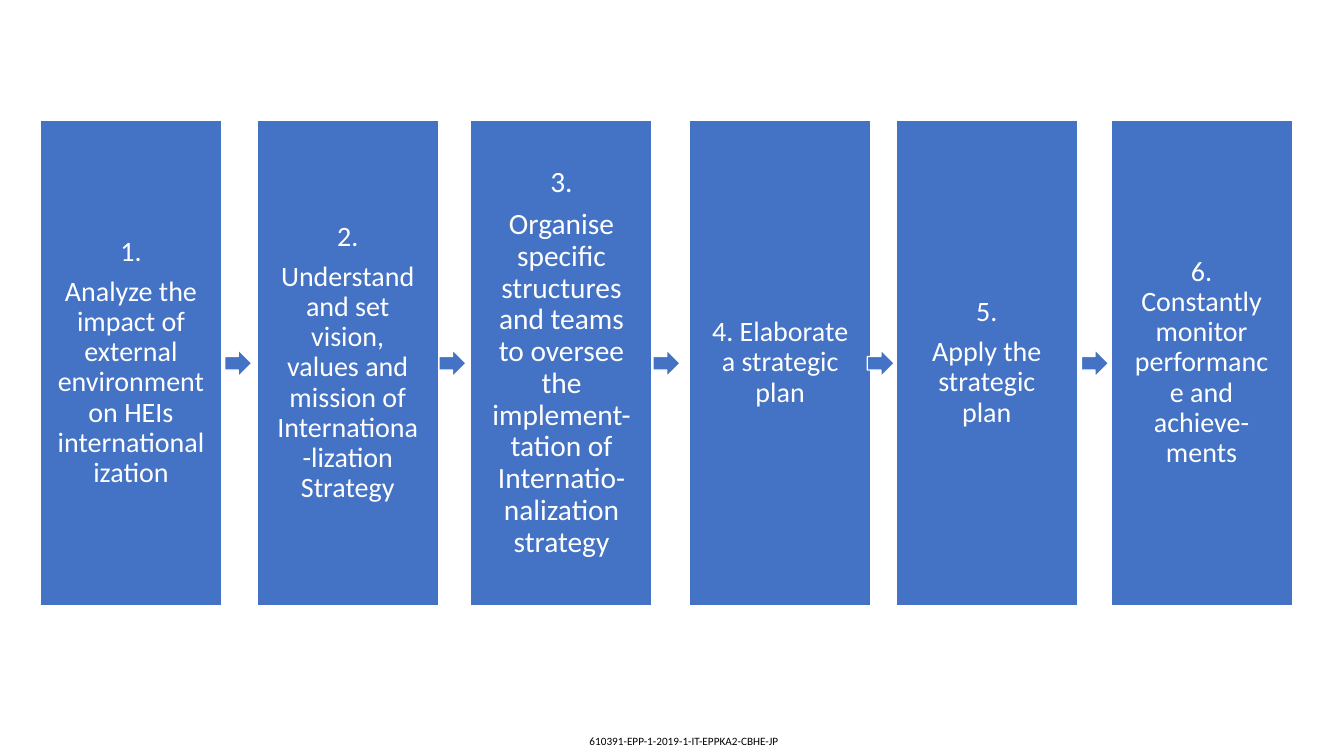
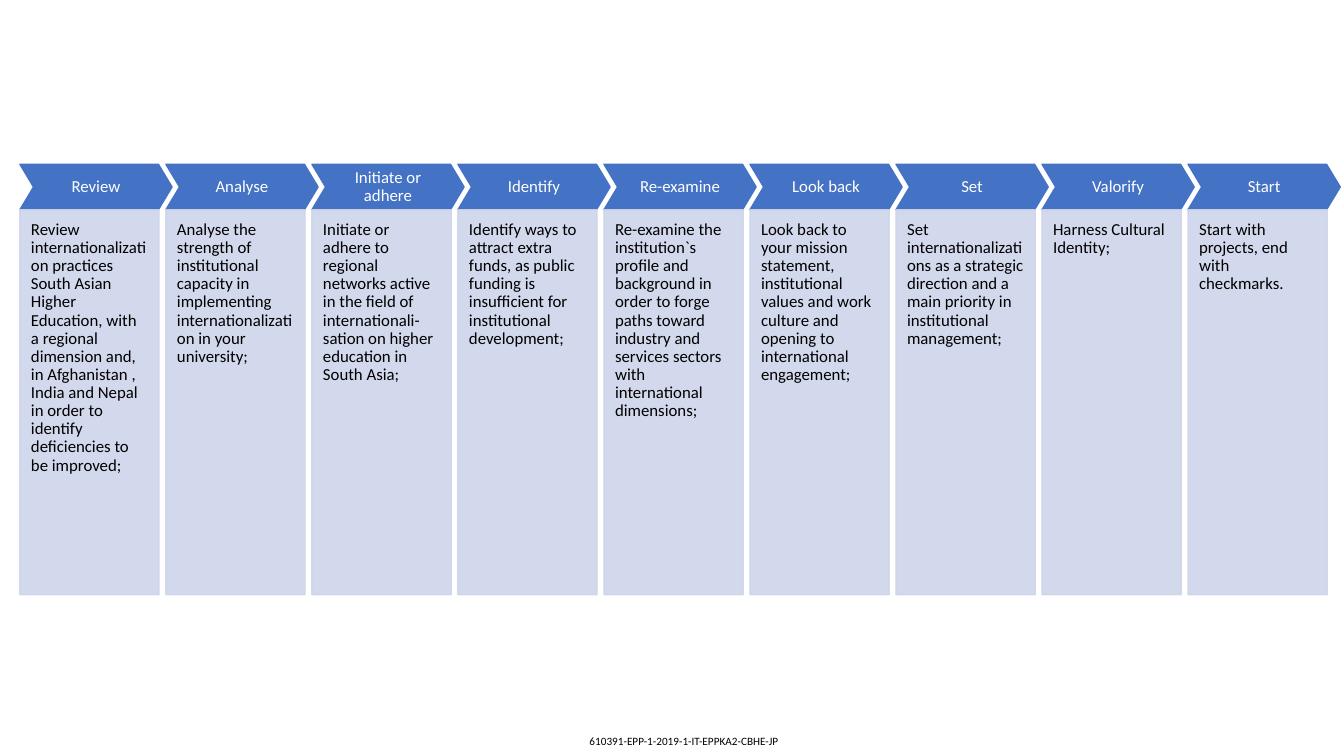
from dataclasses import dataclass

from lxml.etree import SubElement
from pptx import Presentation
from pptx.dml.color import RGBColor
from pptx.enum.shapes import MSO_SHAPE
from pptx.enum.text import MSO_ANCHOR, MSO_AUTO_SIZE, PP_ALIGN
from pptx.oxml.ns import qn
from pptx.util import Pt


@dataclass(frozen=True)
class Theme:
    font: str = "Calibri"
    blue: RGBColor = RGBColor(0x44, 0x72, 0xC4)
    pale: RGBColor = RGBColor(0xCF, 0xD5, 0xEA)
    white: RGBColor = RGBColor(0xFF, 0xFF, 0xFF)
    black: RGBColor = RGBColor(0x00, 0x00, 0x00)
    footer_size: float = 8
    step_size: float = 20
    large_step_size: float = 21
    action_size: float = 12
    pale_opacity: int = 90


THEME = Theme()
FOOTER = "610391-EPP-1-2019-1-IT-EPPKA2-CBHE-JP"

STEPS = [
    (28.8, THEME.step_size,
     ["1.", "Analyze the impact of external environment on HEIs internationalization"]),
    (183.6, THEME.step_size,
     ["2.", "Understand and set vision, values and mission of "
            "Internationa-lization Strategy"]),
    (336.3, THEME.large_step_size,
     ["3.", "Organise specific structures and teams to oversee the "
            "implement-tation of Internatio-nalization strategy"]),
    (492.5, THEME.step_size, ["4. Elaborate a strategic plan"]),
    (640.1, THEME.step_size, ["5.", "Apply the strategic plan"]),
    (793.5, THEME.step_size,
     ["6. Constantly monitor performance and achieve-ments"]),
]

ACTIONS = [
    ("Review",
     "Review internationalization practices South Asian Higher Education, with a "
     "regional dimension and, in Afghanistan , India and Nepal in order to identify "
     "deficiencies to be improved;"),
    ("Analyse",
     "Analyse the strength of institutional capacity in implementing "
     "internationalization in your university;"),
    ("Initiate or adhere",
     "Initiate or adhere to regional networks active in the field of "
     "internationali-sation on higher education in South Asia;"),
    ("Identify",
     "Identify ways to attract extra funds, as public funding is insufficient for "
     "institutional development;"),
    ("Re-examine",
     "Re-examine the institution`s profile and background in order to forge paths "
     "toward industry and services sectors with international dimensions;"),
    ("Look back",
     "Look back to your mission statement, institutional values and work culture "
     "and opening to international engagement;"),
    ("Set",
     "Set internationalizations as a strategic direction and a main priority in "
     "institutional management;"),
    ("Valorify", "Harness Cultural Identity;"),
    ("Start", "Start with projects, end with checkmarks."),
]


def apply_format(target, values):
    for name, value in values.items():
        setattr(target, name, value)


def write_text(shape, texts, size, color, align=PP_ALIGN.LEFT,
               anchor=MSO_ANCHOR.TOP, margins=(0, 0, 0, 0)):
    frame = shape.text_frame
    sides = ("margin_left", "margin_top", "margin_right", "margin_bottom")
    apply_format(frame, {"word_wrap": True, "vertical_anchor": anchor})
    apply_format(frame, {side: Pt(margin) for side, margin in zip(sides, margins)})
    for index, text in enumerate(texts):
        para = frame.add_paragraph() if index else frame.paragraphs[0]
        apply_format(para, {"alignment": align, "line_spacing": 0.9,
                            "space_after": Pt(0.35 * size)})
        span = para.add_run()
        span.text = text
        apply_format(span.font, {"name": THEME.font, "size": Pt(size)})
        span.font.color.rgb = color


def add_panel(page, kind, place, fill, line, adjustment=None):
    shape = page.shapes.add_shape(kind, *map(Pt, place))
    shape.shadow.inherit = False
    shape.fill.solid()
    shape.fill.fore_color.rgb = fill
    shape.line.color.rgb = line
    shape.line.width = Pt(1)
    if adjustment is not None:
        shape.adjustments[0] = adjustment
    return shape


def set_opacity(shape, percent):
    for color in shape.element.spPr.iter(qn("a:srgbClr")):
        SubElement(color, qn("a:alpha"), val=str(percent * 1000))


def add_footer(page):
    box = page.shapes.add_textbox(Pt(414), Pt(521.3), Pt(151.2), Pt(26.6))
    apply_format(box.text_frame, {"word_wrap": False,
                                  "auto_size": MSO_AUTO_SIZE.SHAPE_TO_FIT_TEXT})
    span = box.text_frame.paragraphs[0].add_run()
    span.text = FOOTER
    apply_format(span.font, {"name": THEME.font, "size": Pt(THEME.footer_size)})
    span.font.color.rgb = THEME.black


def add_page(deck):
    page = deck.slides.add_slide(deck.slide_layouts[6])
    add_footer(page)
    return page


def add_step(page, left, size, texts):
    panel = add_panel(page, MSO_SHAPE.RECTANGLE, (left, 85.7, 129.6, 347),
                      THEME.blue, THEME.white)
    write_text(panel, texts, size, THEME.white, PP_ALIGN.CENTER,
               MSO_ANCHOR.MIDDLE, (12.2,) * 4)


def add_step_arrow(page, index):
    add_panel(page, MSO_SHAPE.RIGHT_ARROW, (160.5 + 153 * index, 249.8, 19.4, 19.4),
              THEME.blue, THEME.white)


def add_action(page, index, title, detail):
    left = 14.2 + 104.3 * index
    chevron = add_panel(page, MSO_SHAPE.CHEVRON, (left, 117.3, 108.7, 32.5),
                        THEME.blue, THEME.blue, 0.3)
    write_text(chevron, [title], THEME.action_size, THEME.white, PP_ALIGN.CENTER,
               MSO_ANCHOR.MIDDLE, (4.3,) * 4)
    panel = add_panel(page, MSO_SHAPE.RECTANGLE, (left, 149.8, 99.4, 275),
                      THEME.pale, THEME.pale)
    set_opacity(panel, THEME.pale_opacity)
    write_text(panel, [detail], THEME.action_size, THEME.black,
               margins=(7.9, 7.9, 7.9, 15.8))


def main():
    deck = Presentation()
    apply_format(deck, {"slide_width": Pt(960), "slide_height": Pt(540)})

    page = add_page(deck)
    for step in STEPS:
        add_step(page, *step)
    for index in range(len(STEPS) - 1):
        add_step_arrow(page, index)

    page = add_page(deck)
    for index, action in enumerate(ACTIONS):
        add_action(page, index, *action)

    deck.save("out.pptx")


if __name__ == "__main__":
    main()
